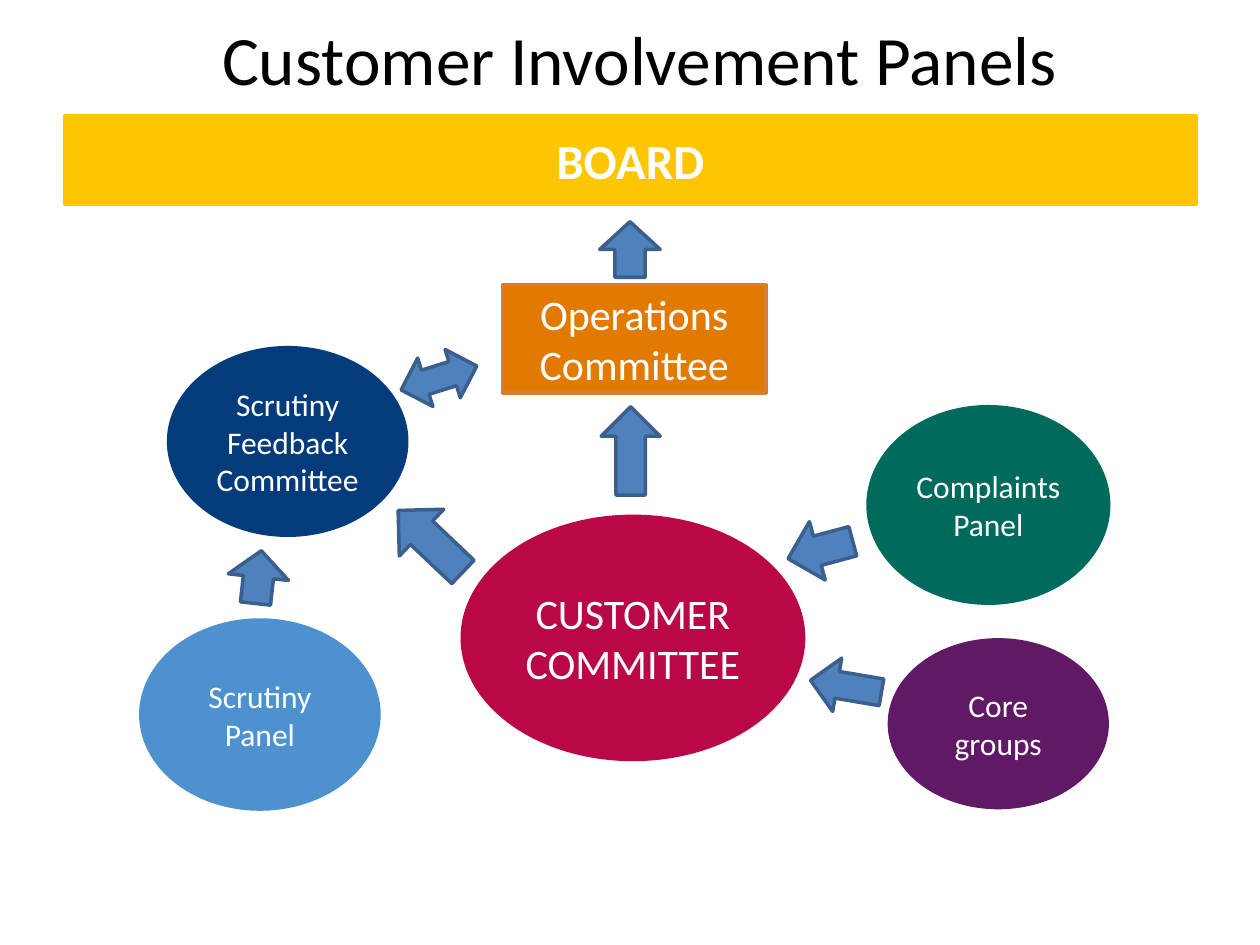
from pptx import Presentation
from pptx import util as u
from pptx.dml.color import RGBColor
from pptx.enum import shapes, text

FONT = "Calibri"
WHITE = "FFFFFF"
OVAL = shapes.MSO_SHAPE.FLOWCHART_CONNECTOR
RECT = shapes.MSO_SHAPE.RECTANGLE
UP = shapes.MSO_SHAPE.UP_ARROW
BOTH_WAYS = shapes.MSO_SHAPE.LEFT_RIGHT_ARROW

# Bodies: shape, (left, top, width, height) in cm, fill, line, label, size, bold
BODIES = [
    (RECT, (1.3, 2.34, 22.81, 1.78), "FDC600", "FDC600", "BOARD", 28, True),
    (RECT, (10.13, 5.74, 5.31, 2.18), "E27A00", "D67E36",
     "Operations Committee", 24, False),
    (OVAL, (9.32, 10.41, 6.88, 4.9), "B90748", "B90748",
     "CUSTOMER COMMITTEE", 24, False),
    (OVAL, (3.4, 7.01, 4.8, 3.78), "043C7B", "043C7B",
     "Scrutiny Feedback Committee", 18, False),
    (OVAL, (2.84, 12.5, 4.8, 3.81), "4D92CF", "4D92CF",
     "Scrutiny Panel", 18, False),
    (OVAL, (17.5, 8.2, 4.85, 3.96), "006A5D", "006A5D",
     "Complaints Panel", 18, False),
    (OVAL, (17.93, 12.9, 4.39, 3.38), "601964", "601964",
     "Core groups", 18, False),
]

# Arrows: shape, (left, top, width, height) in cm, rotation in degrees
ARROWS = [
    (UP, (12.09, 4.47, 1.22, 1.12), 0),           # operations to board
    (UP, (12.12, 8.2, 1.19, 1.78), 0),            # customer to operations
    (BOTH_WAYS, (8.05, 7.11, 1.6, 1.02), 342.5),  # feedback and operations
    (UP, (8.03, 10.01, 1.3, 1.8), 313.5),         # customer to feedback
    (UP, (4.6, 11.1, 1.22, 1.07), 6.3),           # scrutiny to feedback
    (UP, (15.93, 10.41, 1.22, 1.35), 254.9),      # complaints to customer
    (UP, (16.51, 13.11, 1.09, 1.45), 279.6),      # core groups to customer
]


def rgb(value):
    return RGBColor.from_string(value)


def write(tf, label, size, color, bold=False):
    tf.word_wrap = True
    tf.vertical_anchor = text.MSO_ANCHOR.MIDDLE
    p = tf.paragraphs[0]
    p.alignment = text.PP_ALIGN.CENTER
    r = p.add_run()
    r.text = label
    r.font.name = FONT
    r.font.size = u.Pt(size)
    r.font.bold = bold
    r.font.color.rgb = rgb(color)


def add_title(s, label):
    sp = s.shapes.title
    sp.left, sp.top, sp.width, sp.height = map(u.Cm, (1.3, 0.51, 23.19, 1.32))
    write(sp.text_frame, label, 39.6, "000000")


def add_figure(s, kind, box, fill, line):
    sp = s.shapes.add_shape(kind, *map(u.Cm, box))
    sp.shadow.inherit = False
    sp.fill.solid()
    sp.fill.fore_color.rgb = rgb(fill)
    sp.line.color.rgb = rgb(line)
    sp.line.width = u.Pt(2)
    return sp


def add_body(s, kind, box, fill, line, label, size, bold):
    sp = add_figure(s, kind, box, fill, line)
    write(sp.text_frame, label, size, WHITE, bold)


def add_arrow(s, kind, box, rotation):
    sp = add_figure(s, kind, box, "4F81BD", "3A5F8C")
    sp.rotation = rotation


def main():
    prs = Presentation()
    prs.slide_width, prs.slide_height = u.Cm(25.4), u.Cm(19.05)
    s = prs.slides.add_slide(prs.slide_layouts[5])  # title only

    add_title(s, "Customer Involvement Panels")
    for body in BODIES:
        add_body(s, *body)
    for arrow in ARROWS:
        add_arrow(s, *arrow)

    prs.save("out.pptx")


if __name__ == "__main__":
    main()
